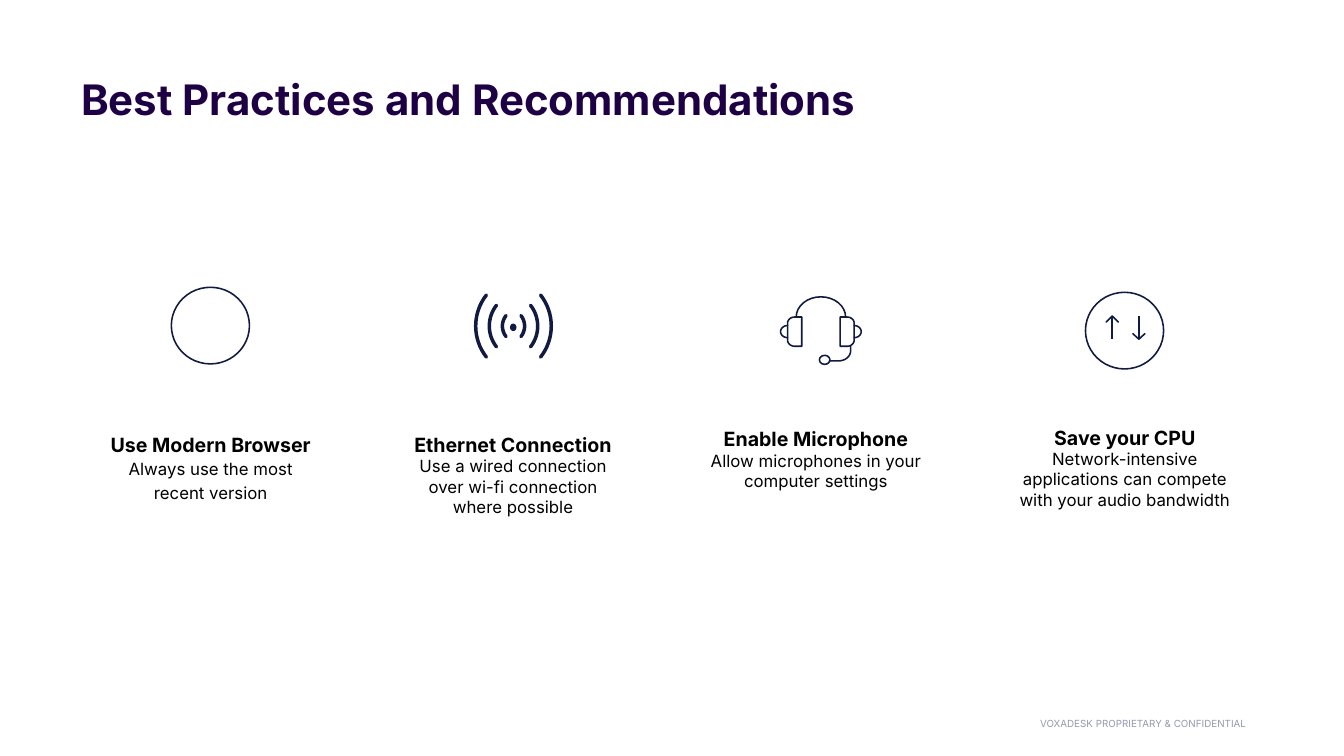
from dataclasses import dataclass
from math import cos, radians, sin

from lxml import etree
from pptx import Presentation
from pptx.dml.color import RGBColor
from pptx.enum.shapes import MSO_CONNECTOR, MSO_SHAPE
from pptx.enum.text import MSO_ANCHOR, PP_ALIGN
from pptx.oxml.ns import qn
from pptx.util import Inches, Pt

OVAL = MSO_SHAPE.OVAL
STRAIGHT = MSO_CONNECTOR.STRAIGHT
TOP, MIDDLE = MSO_ANCHOR.TOP, MSO_ANCHOR.MIDDLE
LEFT, CENTER, RIGHT = PP_ALIGN.LEFT, PP_ALIGN.CENTER, PP_ALIGN.RIGHT


@dataclass(frozen=True)
class Theme:
    font: str = "Inter"
    title: RGBColor = RGBColor(0x1E, 0x00, 0x44)
    text: RGBColor = RGBColor(0x00, 0x00, 0x00)
    footer: RGBColor = RGBColor(0x94, 0x9B, 0xAD)
    icon: RGBColor = RGBColor(0x11, 0x1A, 0x40)
    title_size: int = 60
    heading_size: int = 28
    body_size: int = 24
    footer_size: int = 14
    thin: float = 2.25
    thick: float = 5


theme = Theme()


def arc(center_x, center_y, radius_x, radius_y, start, end, steps=16):
    """Points along an ellipse, in inches; angles in degrees, clockwise from the right."""
    angles = [radians(start + (end - start) * step / steps) for step in range(steps + 1)]
    return [(center_x + radius_x * cos(a), center_y + radius_y * sin(a)) for a in angles]


def draw_stroke(points, width=theme.thin, close=False):
    """Draw an unfilled outline with round ends through points given in inches."""
    corners = [(Inches(x), Inches(y)) for x, y in points]
    builder = page.shapes.build_freeform(*corners[0], scale=1.0)
    builder.add_line_segments(corners[1:], close=close)
    shape = builder.convert_to_shape()
    shape.shadow.inherit = False
    shape.fill.background()
    shape.line.color.rgb = theme.icon
    shape.line.width = Pt(width)
    shape.line._get_or_add_ln().set("cap", "rnd")


deck = Presentation()
deck.slide_width, deck.slide_height = Inches(26.67), Inches(15)
page = deck.slides.add_slide(deck.slide_layouts[6])

# Text: each paragraph is wording, size, bold, colour, line spacing
title = ("Best Practices and Recommendations", theme.title_size, True, theme.title, 1)
footer = ("VOXADESK PROPRIETARY & CONFIDENTIAL", theme.footer_size, False, theme.footer, 1)
boxes = [
    ((18.71, 14.09, 6.02, 0.53), 0, MIDDLE, RIGHT, [footer]),
    ((1.53, 1.37, 24, 1.34), 0.08, TOP, LEFT, [title]),
]
practices = [
    ((1.85, 7.87, 4.66, 2.74), 1.15, "Use Modern Browser",
     ["Always use the most", "recent version"]),
    ((7.85, 7.87, 4.66, 3.02), 1, "Ethernet Connection",
     ["Use a wired connection", "over wi-fi connection", "where possible"]),
    ((13.86, 8.08, 4.66, 1.97), 1, "Enable Microphone",
     ["Allow microphones in your computer settings"]),
    ((19.87, 7.81, 4.9, 2.86), 1, "Save your CPU",
     ["Network-intensive applications can compete with your audio bandwidth"]),
]
for place, spacing, heading, lines in practices:
    paragraphs = [(heading, theme.heading_size, True, theme.text, 1.15)]
    paragraphs += [(line, theme.body_size, False, theme.text, spacing) for line in lines]
    boxes.append((place, 0.1, MIDDLE, CENTER, paragraphs))

for place, inset, anchor, alignment, paragraphs in boxes:
    frame = page.shapes.add_textbox(*map(Inches, place)).text_frame
    frame.word_wrap = True
    frame.vertical_anchor = anchor
    frame.margin_left = frame.margin_right = Inches(inset)
    frame.margin_top = frame.margin_bottom = Inches(inset)
    for index, (wording, size, bold, color, spacing) in enumerate(paragraphs):
        para = frame.add_paragraph() if index else frame.paragraphs[0]
        para.text = wording
        para.alignment = alignment
        para.line_spacing = spacing
        para.font.name = theme.font
        para.font.size = Pt(size)
        para.font.bold = bold
        para.font.color.rgb = color

# Round parts: browser, signal dot, headset microphone, processor
ovals = [
    ((3.4, 5.7, 1.55, 1.52), False),
    ((10.12, 6.42, 0.13, 0.15), True),
    ((16.26, 7.05, 0.21, 0.18), False),
    ((21.54, 5.8, 1.55, 1.52), False),
]
for place, solid in ovals:
    oval = page.shapes.add_shape(OVAL, *map(Inches, place))
    oval.shadow.inherit = False
    if solid:
        oval.fill.solid()
        oval.fill.fore_color.rgb = theme.icon
        oval.line.fill.background()
    else:
        oval.fill.background()
        oval.line.color.rgb = theme.icon
        oval.line.width = Pt(theme.thin)

# Signal waves on both sides of the dot
signal_x, signal_y = 10.19, 6.47
for tip, radius in [(0.75, 1), (0.48, 0.67), (0.22, 0.34)]:
    for side, middle in [(1, 0), (-1, 180)]:
        wave_x = signal_x + side * (tip - radius)
        draw_stroke(arc(wave_x, signal_y, radius, radius, middle - 38, middle + 38), theme.thick)

# Headset: band, boom, then a cup and a cap for each ear
headset_x, ear_y = 16.29, 6.58
draw_stroke(arc(headset_x, 6.29, 0.49, 0.4, 180, 360))
draw_stroke([(16.46, 7.16)] + arc(16.64, 6.96, 0.24, 0.2, 90, 0) + [(16.88, 6.87)])
for side in (-1, 1):
    inner, bend, outer = [headset_x + side * offset for offset in (0.38, 0.52, 0.66)]
    cup = [(inner, ear_y + 0.29)]
    cup += arc(bend, ear_y + 0.17, side * 0.14, 0.12, 90, 0)
    cup += arc(bend, ear_y - 0.17, side * 0.14, 0.12, 0, -90)
    cup.append((inner, ear_y - 0.29))
    draw_stroke(cup, close=True)
    draw_stroke(arc(outer, ear_y, side * 0.14, 0.12, -90, 90))

# Up and down arrows of the processor
for x, tip, wing, tail in [(22.07, 6.27, 6.39, 6.73), (22.6, 6.73, 6.62, 6.27)]:
    shaft = page.shapes.add_connector(STRAIGHT, Inches(x), Inches(tail), Inches(x), Inches(tip))
    shaft.line.color.rgb = theme.icon
    shaft.line.width = Pt(theme.thin)
    etree.SubElement(shaft._element.spPr, qn("a:effectLst"))
    draw_stroke([(x - 0.12, wing), (x, tip), (x + 0.12, wing)])

deck.save("out.pptx")
